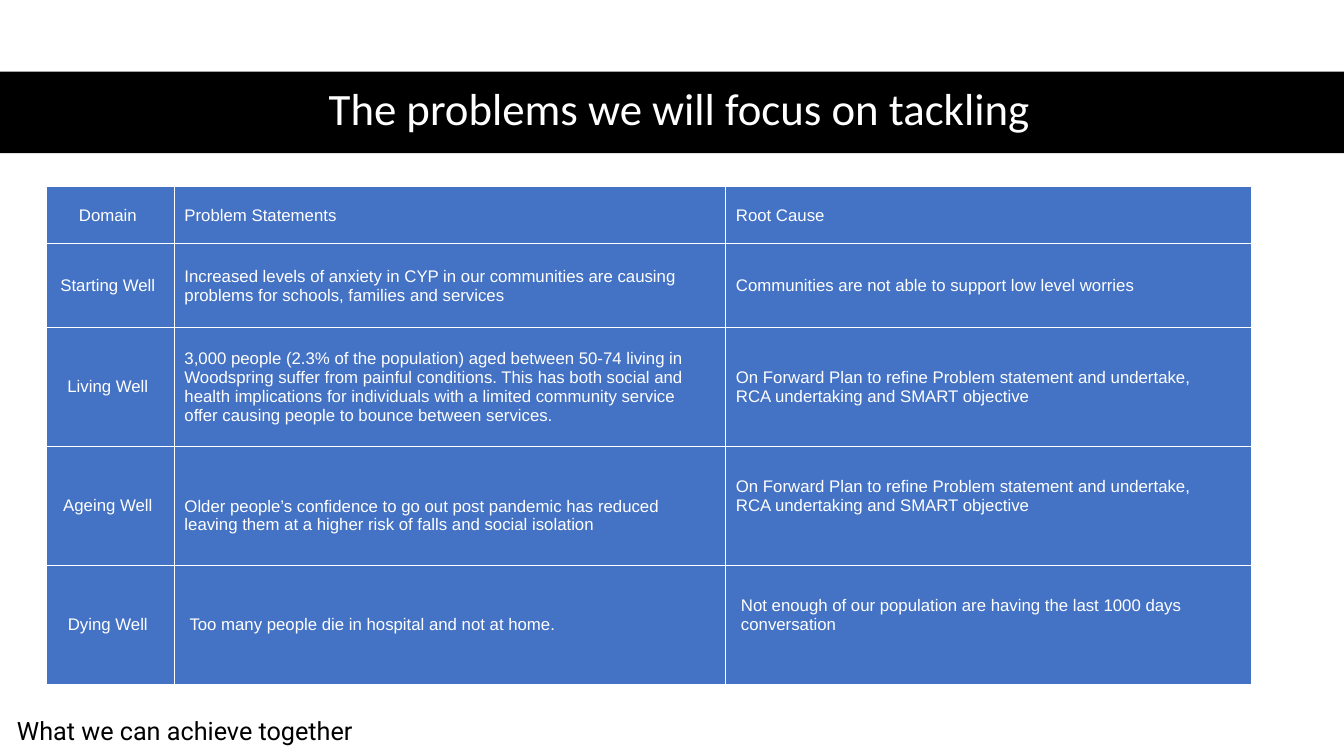
import pptx
import pptx.dml.color
import pptx.enum.shapes
import pptx.enum.text
import pptx.oxml.ns
import pptx.util
from lxml import etree

Inches = pptx.util.Inches
Pt = pptx.util.Pt
RGBColor = pptx.dml.color.RGBColor
PP_ALIGN = pptx.enum.text.PP_ALIGN
MSO_ANCHOR = pptx.enum.text.MSO_ANCHOR

WHITE = RGBColor(0xFF, 0xFF, 0xFF)
BLACK = RGBColor(0, 0, 0)
BLUE = RGBColor(0x44, 0x72, 0xC4)

# Content: every cell is a list of lines
TITLE = "The problems we will focus on tackling"
TAGLINE = "What we can achieve together"
FORWARD_PLAN = ["On Forward Plan to refine Problem statement and undertake,",
                "RCA undertaking and SMART objective"]
ROWS = [
    (["Domain"], ["Problem Statements"], ["Root Cause"]),
    (["Starting Well"],
     ["Increased levels of anxiety in CYP in our communities are causing",
      "problems for schools, families and services"],
     ["Communities are not able to support low level worries"]),
    (["Living Well"],
     ["3,000 people (2.3% of the population) aged between 50-74 living in",
      "Woodspring suffer from painful conditions. This has both social and",
      "health implications for individuals with a limited community service",
      "offer causing people to bounce between services."],
     FORWARD_PLAN),
    (["Ageing Well"],
     ["Older people’s confidence to go out post pandemic has reduced",
      "leaving them at a higher risk of falls and social isolation"],
     FORWARD_PLAN),
    (["Dying Well"],
     ["Too many people die in hospital and not at home."],
     ["Not enough of our population are having the last 1000 days",
      "conversation"]),
]
COLUMN_WIDTHS = [1.27, 5.47, 5.21]
ROW_HEIGHTS = [0.57, 0.83, 1.18, 1.18, 1.18]

# Cell margins (left, top, right, bottom) by column, then the exceptions
COLUMN_MARGINS = [(0.1, 0.05, 0.15, 0.05), (0.1, 0, 0, 0), (0.1, 0, 0, 0)]
CELL_MARGINS = {
    (3, 1): (0.1, 0.19, 0, 0),
    (3, 2): (0.1, 0, 0, 0.19),
    (4, 1): (0.15, 0, 0, 0),
    (4, 2): (0.15, 0, 0, 0.19),
}


def style(paragraph, font_name, size, color, alignment=PP_ALIGN.LEFT):
    paragraph.alignment = alignment
    paragraph.font.name = font_name
    paragraph.font.size = Pt(size)
    paragraph.font.color.rgb = color


def add_borders(cell):
    properties = cell._tc.get_or_add_tcPr()
    for side in ("a:lnL", "a:lnR", "a:lnT", "a:lnB"):
        line = etree.SubElement(properties, pptx.oxml.ns.qn(side), w=str(Pt(1)))
        fill = etree.SubElement(line, pptx.oxml.ns.qn("a:solidFill"))
        etree.SubElement(fill, pptx.oxml.ns.qn("a:srgbClr"), val=str(WHITE))


def fill_cell(cell, lines, margins, alignment):
    add_borders(cell)
    cell.fill.solid()
    cell.fill.fore_color.rgb = BLUE
    cell.vertical_anchor = MSO_ANCHOR.MIDDLE
    (cell.margin_left, cell.margin_top,
     cell.margin_right, cell.margin_bottom) = map(Inches, margins)
    cell.text = "\n".join(lines)
    for paragraph in cell.text_frame.paragraphs:
        style(paragraph, "Arial", 12, WHITE, alignment)
        paragraph.font.bold = False


presentation = pptx.Presentation()
presentation.slide_width = Inches(13.33)
presentation.slide_height = Inches(7.5)
slide = presentation.slides.add_slide(presentation.slide_layouts[5])
shapes = slide.shapes

# Title on a black band
title = shapes.title
band = shapes.add_shape(pptx.enum.shapes.MSO_SHAPE.RECTANGLE, 0, Inches(0.71),
                        presentation.slide_width, Inches(0.81))
band.shadow.inherit = False
band.fill.solid()
band.fill.fore_color.rgb = BLACK
band.line.fill.background()
band._element.addnext(title._element)

title.left, title.top = Inches(0.61), Inches(0.7)
title.width, title.height = Inches(12.26), Inches(0.81)
title.text_frame.text = TITLE
title.text_frame.vertical_anchor = MSO_ANCHOR.MIDDLE
paragraph = title.text_frame.paragraphs[0]
paragraph.line_spacing = 0.9
style(paragraph, "Calibri", 32, WHITE, PP_ALIGN.CENTER)

# Tagline
tagline = shapes.add_textbox(Inches(0.07), Inches(7.08), Inches(6.67), Inches(0.38))
tagline.text_frame.word_wrap = True
tagline.text_frame.text = TAGLINE
paragraph = tagline.text_frame.paragraphs[0]
paragraph.line_spacing = 0.9
paragraph.space_after = Pt(6)
style(paragraph, "Roboto", 18, BLACK)

# Table of problems
table = shapes.add_table(len(ROWS), len(COLUMN_WIDTHS), Inches(0.46), Inches(1.85),
                         Inches(sum(COLUMN_WIDTHS)), Inches(sum(ROW_HEIGHTS))).table
for column, width in zip(table.columns, COLUMN_WIDTHS):
    column.width = Inches(width)
for row, height in zip(table.rows, ROW_HEIGHTS):
    row.height = Inches(height)
for row_index, row in enumerate(ROWS):
    for column_index, lines in enumerate(row):
        margins = CELL_MARGINS.get((row_index, column_index), COLUMN_MARGINS[column_index])
        alignment = PP_ALIGN.CENTER if column_index == 0 else PP_ALIGN.LEFT
        fill_cell(table.cell(row_index, column_index), lines, margins, alignment)

presentation.save("out.pptx")
